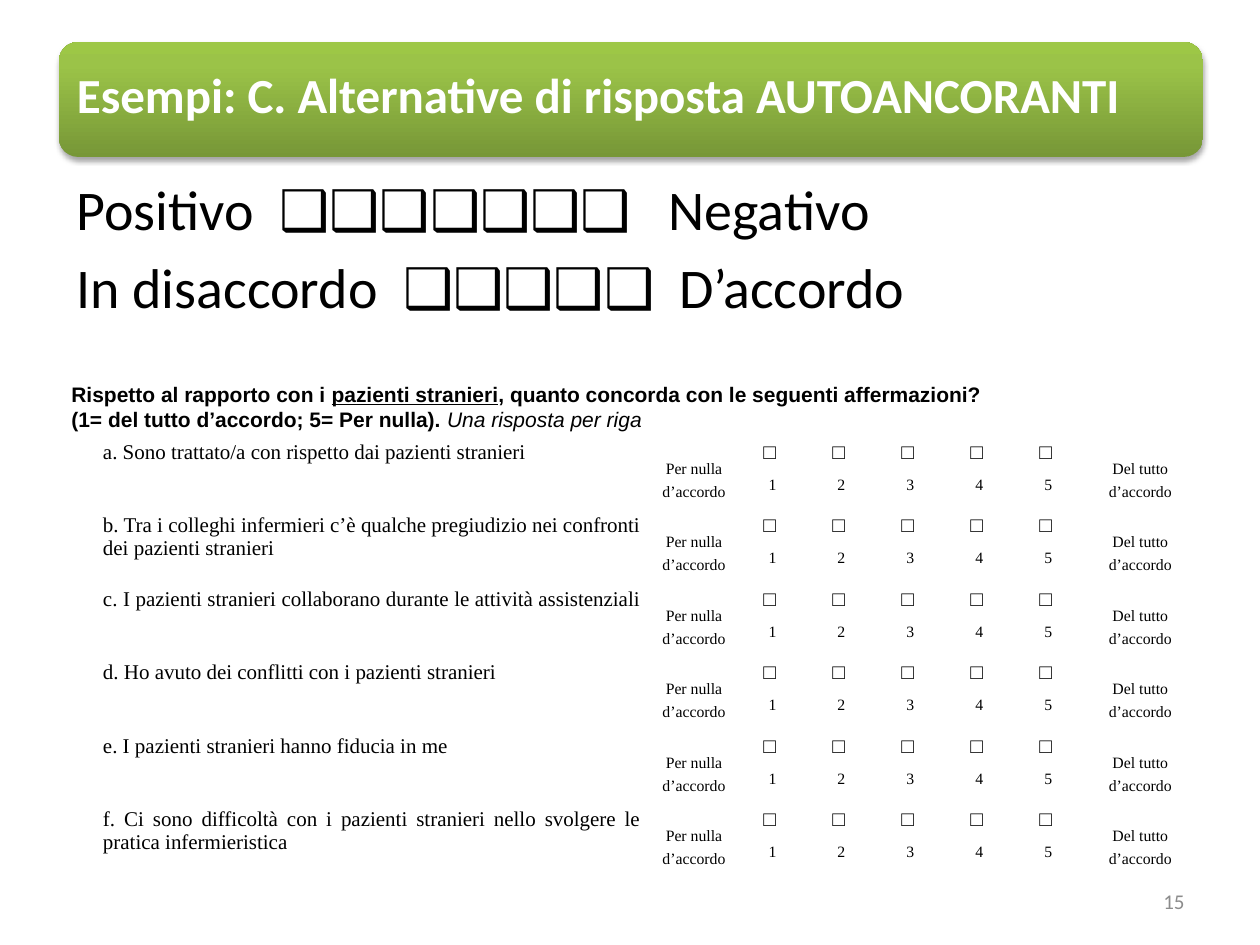
from lxml import etree
from pptx import Presentation
from pptx import util as u
from pptx.dml.color import RGBColor
from pptx.enum import shapes, text
from pptx.oxml import ns, parse_xml

DPI = 126
ALIGN, ANCHOR = text.PP_ALIGN, text.MSO_ANCHOR
ITEMS = [
    "a. Sono trattato/a con rispetto dai pazienti stranieri ",
    "b. Tra i colleghi infermieri c’è qualche pregiudizio nei confronti dei pazienti stranieri ",
    "c. I pazienti stranieri collaborano durante le attività assistenziali ",
    "d. Ho avuto dei conflitti con i pazienti stranieri ",
    "e. I pazienti stranieri hanno fiducia in me",
    "f. Ci sono difficoltà con i pazienti stranieri nello svolgere le pratica infermieristica",
]
COLS = [556, 88] + [69] * 5 + [115]


def px(n):
    return u.Emu(round(n * 914400 / DPI))


def paint(font, name, size, color="000000", bold=False):
    font.name, font.size, font.bold = name, u.Pt(size), bold
    font.color.rgb = RGBColor.from_string(color)


def label(slide, box, lines, name, size, color="000000", anchor=ANCHOR.TOP):
    frame = slide.shapes.add_textbox(*map(px, box)).text_frame
    frame.word_wrap, frame.vertical_anchor = True, anchor
    frame.text = "\n".join(lines)
    for par in frame.paragraphs:
        for run in par.runs:
            paint(run.font, name, size, color)
    return frame


def banner(slide, box, title):
    bar = slide.shapes.add_shape(shapes.MSO_SHAPE.ROUNDED_RECTANGLE, *map(px, box))
    bar.line.fill.background()
    # Three-stop gradient and soft drop shadow
    stops = "".join(
        f'<a:gs pos="{pos}000"><a:srgbClr val="{hue}"/></a:gs>'
        for pos, hue in [(0, "779737"), (80, "9BC348"), (100, "9DC746")])
    grad = parse_xml(f'<a:gradFill {ns.nsdecls("a")} rotWithShape="1"><a:gsLst>{stops}'
                     '</a:gsLst><a:lin ang="16200000" scaled="0"/></a:gradFill>')
    props = bar.element.spPr
    props.find(ns.qn("a:prstGeom")).addnext(grad)
    bar.shadow.inherit = False
    glow = etree.SubElement(props.find(ns.qn("a:effectLst")), ns.qn("a:outerShdw"),
                            blurRad="40000", dist="23000", dir="5400000", rotWithShape="0")
    tint = etree.SubElement(glow, ns.qn("a:srgbClr"), val="000000")
    etree.SubElement(tint, ns.qn("a:alpha"), val="35000")
    # Title
    frame = bar.text_frame
    frame.word_wrap, frame.vertical_anchor = True, ANCHOR.MIDDLE
    frame.text = title
    par = frame.paragraphs[0]
    par.alignment, par.line_spacing = ALIGN.LEFT, 0.8
    paint(par.runs[0].font, "Calibri", 28, "FFFFFF", True)


def scales(slide, box):
    frame = label(slide, box, ["Positivo  ❑❑❑❑❑❑❑   Negativo",
                               "In disaccordo  ❑❑❑❑❑  D’accordo"], "Calibri", 32)
    for par in frame.paragraphs:
        par.space_before = u.Pt(6.4)
        props = par._p.get_or_add_pPr()
        props.set("marL", str(px(48)))
        props.set("indent", str(-px(48)))


def intro(slide, box):
    frame = label(slide, box, ["", ""], "Arial", 12)
    parts = [
        [("Rispetto al rapporto con i ", "b"), ("pazienti stranieri", "bu"),
         (", quanto concorda con le seguenti affermazioni?", "b")],
        [("(1= del tutto d’accordo; 5= Per nulla). ", "b"), ("Una risposta per riga", "i")],
    ]
    for par, runs in zip(frame.paragraphs, parts):
        for words, style in runs:
            run = par.add_run()
            run.text = words
            paint(run.font, "Arial", 12, bold="b" in style)
            run.font.underline, run.font.italic = "u" in style, "i" in style


def fill(cell, words, sizes, align=ALIGN.CENTER, anchor=ANCHOR.TOP, gap=0):
    cell.fill.background()
    cell.margin_left = cell.margin_right = px(9)
    cell.margin_top = cell.margin_bottom = 0
    cell.vertical_anchor = anchor
    cell.text_frame.text = words
    for par, size in zip(cell.text_frame.paragraphs, sizes):
        par.alignment, par.line_spacing, par.space_after = align, u.Pt(13), u.Pt(gap)
        paint(par.runs[0].font, "Times New Roman", size)


def survey(slide, box):
    grid = slide.shapes.add_table(len(ITEMS), len(COLS), *map(px, box)).table
    grid.first_row = grid.horz_banding = False
    for col, width in zip(grid.columns, COLS):
        col.width = px(width)
    for i, item in enumerate(ITEMS):
        grid.rows[i].height = px(box[3] / len(ITEMS))
        fill(grid.cell(i, 0), item, [12], ALIGN.JUSTIFY)
        low = "Per nulla d’accordo" if i else "Per nulla\nd’accordo"
        fill(grid.cell(i, 1), low, [9, 9], anchor=ANCHOR.MIDDLE)
        for mark in range(1, 6):
            fill(grid.cell(i, mark + 1), f"□ \n{mark}", [12, 9], gap=4)
        fill(grid.cell(i, 7), "Del tutto d’accordo", [9], anchor=ANCHOR.MIDDLE)


def number(slide, box, value):
    frame = label(slide, box, [value], "Calibri", 12, "8C8C8C", ANCHOR.MIDDLE)
    frame.paragraphs[0].alignment = ALIGN.RIGHT


def main():
    deck = Presentation()
    deck.slide_width, deck.slide_height = px(1260), px(945)
    slide = deck.slides.add_slide(deck.slide_layouts[6])
    scales(slide, (64, 168, 1134, 179))
    banner(slide, (59, 42, 1144, 115), "Esempi: C. Alternative di risposta AUTOANCORANTI")
    survey(slide, (94, 441, sum(COLS), 441))
    intro(slide, (59, 375, 1179, 102))
    number(slide, (903, 876, 294, 50), "15")
    deck.save("out.pptx")


if __name__ == "__main__":
    main()
